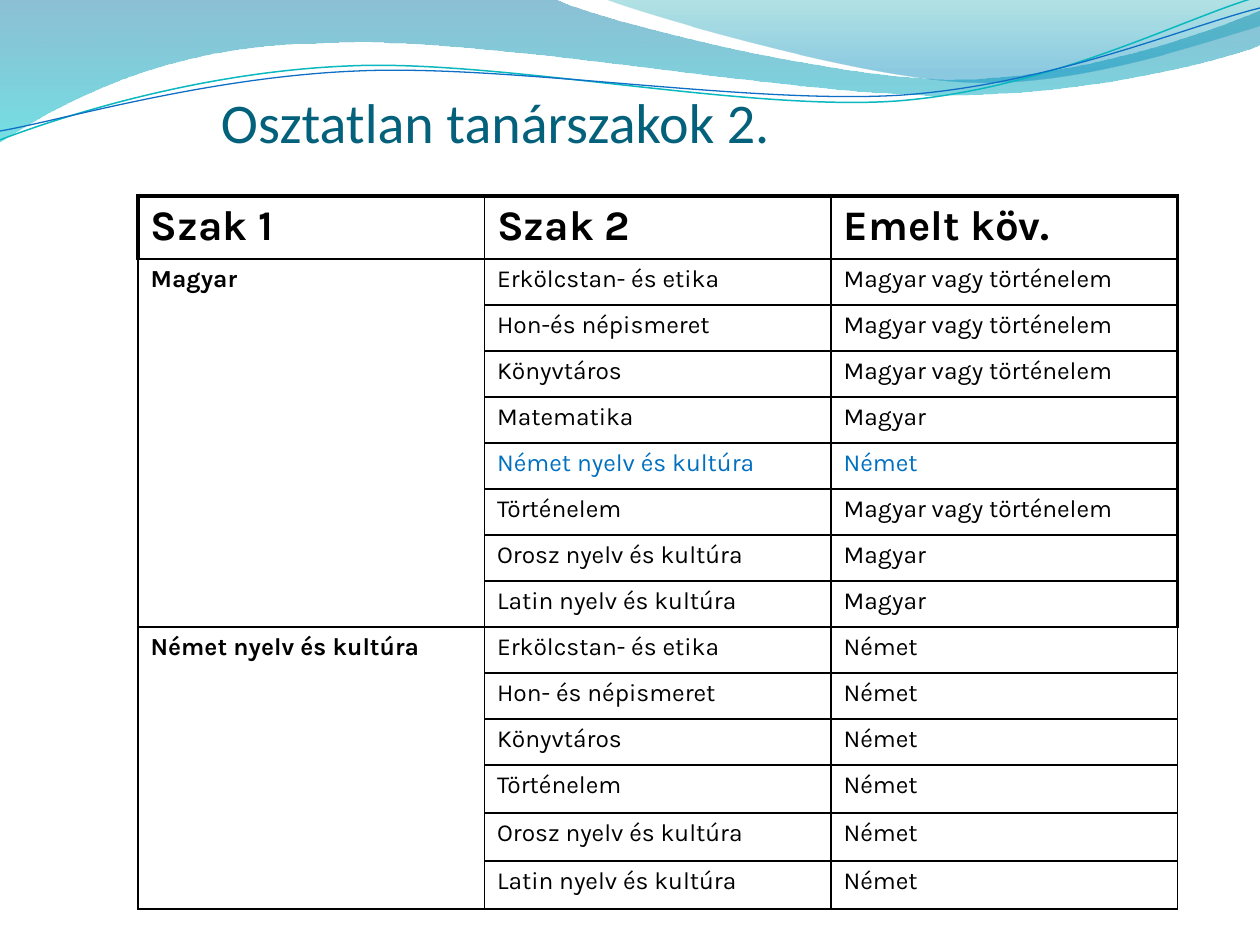
import math

from lxml import etree
from pptx import Presentation, util as u
from pptx.dml.color import RGBColor
from pptx.enum import text
from pptx.oxml import parse_xml
from pptx.oxml.ns import nsdecls, qn

PX = 914400 / 126


def style(font, fmt):
    for key, val in fmt.items():
        if key == "color":
            font.color.rgb = RGBColor.from_string(val)
        else:
            setattr(font, key, val)


def trace(start, parts, close):
    """Draw a path; a part of one point is a line, of three a Bezier curve."""
    pts = [(x * PX, y * PX) for x, y in [start, *sum(parts, [])]]
    path = slide.shapes.build_freeform(*pts[0], scale=1.0)
    path.add_line_segments(pts[1:], close=close)
    shape = path.convert_to_shape()
    shape.shadow.inherit = False
    steps = iter(list(shape._element.iter(qn("a:lnTo"))))
    for part in parts:
        group = [next(steps) for _ in part]
        if len(part) == 3:
            curve = etree.Element(qn("a:cubicBezTo"))
            group[0].addprevious(curve)
            for step in group:
                curve.append(step[0])
                step.getparent().remove(step)
    return shape


prs = Presentation()
prs.slide_width, prs.slide_height = u.Inches(10), u.Inches(7.5)
slide = prs.slides.add_slide(prs.slide_layouts[6])

# Waves: start, parts, gradient stops (position, colour, opacity in %)
waves = [
    ((0, -1),
     [[(554, -1)],
      [(600, 21), (837, 79), (955, 79)],
      [(1075, 79), (1207, 33), (1260, 11)],
      [(1261, 45)],
      [(1239, 55), (1096, 96), (940, 95)],
      [(784, 95), (481, 35), (324, 43)],
      [(163, 44), (58, 105), (-1, 142)],
      [(0, -1)]],
     [(0, "0074A1", 45), (1, "00C6CF", 55)]),
    ((604, -1),
     [[(641, 14), (859, 78), (969, 82)],
      [(1079, 87), (1211, 40), (1260, 26)],
      [(1260, 0)],
      [(604, -1)]],
     [(0, "00A1A9", 30), (0.8, "008BBF", 45)]),
]
for start, parts, stops in waves:
    wave = trace(start, parts, True)
    wave.line.fill.background()
    wave.fill.gradient()
    wave.fill.gradient_angle = 270
    for stop, (pos, color, _) in zip(wave.fill.gradient_stops, stops):
        stop.position = pos
        stop.color.rgb = RGBColor.from_string(color)
    tints = wave._element.spPr.iter(qn("a:srgbClr"))
    for tint, (_, _, alpha) in zip(tints, stops):
        tint.append(parse_xml(f'<a:alpha {nsdecls("a")} val="{alpha * 1000}"/>'))

# Thin lines, tilted about their middle: middle, points, colour, width
TILT = 2.7
cos, sin = math.cos(math.radians(TILT)), math.sin(math.radians(TILT))
lines = [
    ((629, 72),
     [(0, 140), (60, 117), (199, 72), (349, 66),
      (498, 59), (747, 112), (898, 101),
      (1050, 89), (1182, 19), (1257, -3)], "0AB8BF", 0.85),
    ((629, 74),
     [(0, 131), (59, 121), (207, 77), (357, 71),
      (508, 64), (752, 105), (903, 95),
      (1053, 84), (1187, 26), (1260, 8)], "0F6FC6", 0.75),
]
for (mx, my), pts, color, width in lines:
    flat = [(mx + (x - mx) * cos - (y - my) * sin,
             my + (x - mx) * sin + (y - my) * cos) for x, y in pts]
    curve = trace(flat[0], [flat[i:i + 3] for i in (1, 4, 7)], False)
    curve.rotation = 360 - TILT
    curve.fill.background()
    curve.line.color.rgb = RGBColor.from_string(color)
    curve.line.width = u.Pt(width)

# Title
box = slide.shapes.add_textbox(*(round(v * PX) for v in (221, 42, 1039, 113)))
frame = box.text_frame
layout = {"word_wrap": True, "vertical_anchor": text.MSO_ANCHOR.BOTTOM,
          "margin_left": 0, "margin_top": round(6 * PX),
          "margin_right": 0, "margin_bottom": 0}
for key, val in layout.items():
    setattr(frame, key, val)
run = frame.paragraphs[0].add_run()
run.text = "Osztatlan tanárszakok 2."
style(run.font, {"name": "Calibri", "size": u.Pt(32), "color": "04617B"})

# Table
either = "Magyar vagy történelem"
german = "Német nyelv és kultúra"
groups = [
    ("Magyar", [
        ("Erkölcstan- és etika", either),
        ("Hon-és népismeret", either),
        ("Könyvtáros", either),
        ("Matematika", "Magyar"),
        (german, "Német"),
        ("Történelem", either),
        ("Orosz nyelv és kultúra", "Magyar"),
        ("Latin nyelv és kultúra", "Magyar")]),
    (german, [(name, "Német") for name in (
        "Erkölcstan- és etika", "Hon- és népismeret", "Könyvtáros",
        "Történelem", "Orosz nyelv és kultúra", "Latin nyelv és kultúra")]),
]
rows = [("Szak 1", "Szak 2", "Emelt köv.")]
spans = []
for major, pairs in groups:
    spans.append((len(rows), len(rows) + len(pairs) - 1))
    rows += [("" if i else major, *pair) for i, pair in enumerate(pairs)]

highs = [54] + [46] * 11 + [48] * 3
area = [round(v * PX) for v in (138, 196, 1040, 712)]
grid = slide.shapes.add_table(len(rows), 3, *area)
table = grid.table
table.first_row = table.horz_banding = False
for col in table.columns:
    col.width = u.Inches(2.75)
for row, high in zip(table.rows, highs):
    row.height = round(high * PX)
grid.height = area[3]
for top, end in spans:
    table.cell(top, 0).merge(table.cell(end, 0))

thick_end = spans[0][1]
for r, words in enumerate(rows):
    for c, word in enumerate(words):
        cell = table.cell(r, c)
        if cell.is_spanned:
            continue
        thick = {"L": r == 0 and c == 0, "R": c == 2 and r <= thick_end,
                 "T": r == 0, "B": False}
        props = cell._tc.get_or_add_tcPr()
        for side, bold in thick.items():
            props.append(parse_xml(
                f'<a:ln{side} {nsdecls("a")} w="{u.Pt(2.25 if bold else 1)}">'
                '<a:solidFill><a:srgbClr val="000000"/></a:solidFill>'
                f'</a:ln{side}>'))
        cell.fill.background()
        run = cell.text_frame.paragraphs[0].add_run()
        run.text = word
        blue = c > 0 and words[1] == german
        style(run.font, {"name": "Karla", "size": u.Pt(14 if r else 24),
                         "bold": r == 0 or c == 0,
                         "color": "0070C0" if blue else "000000"})

prs.save("out.pptx")
